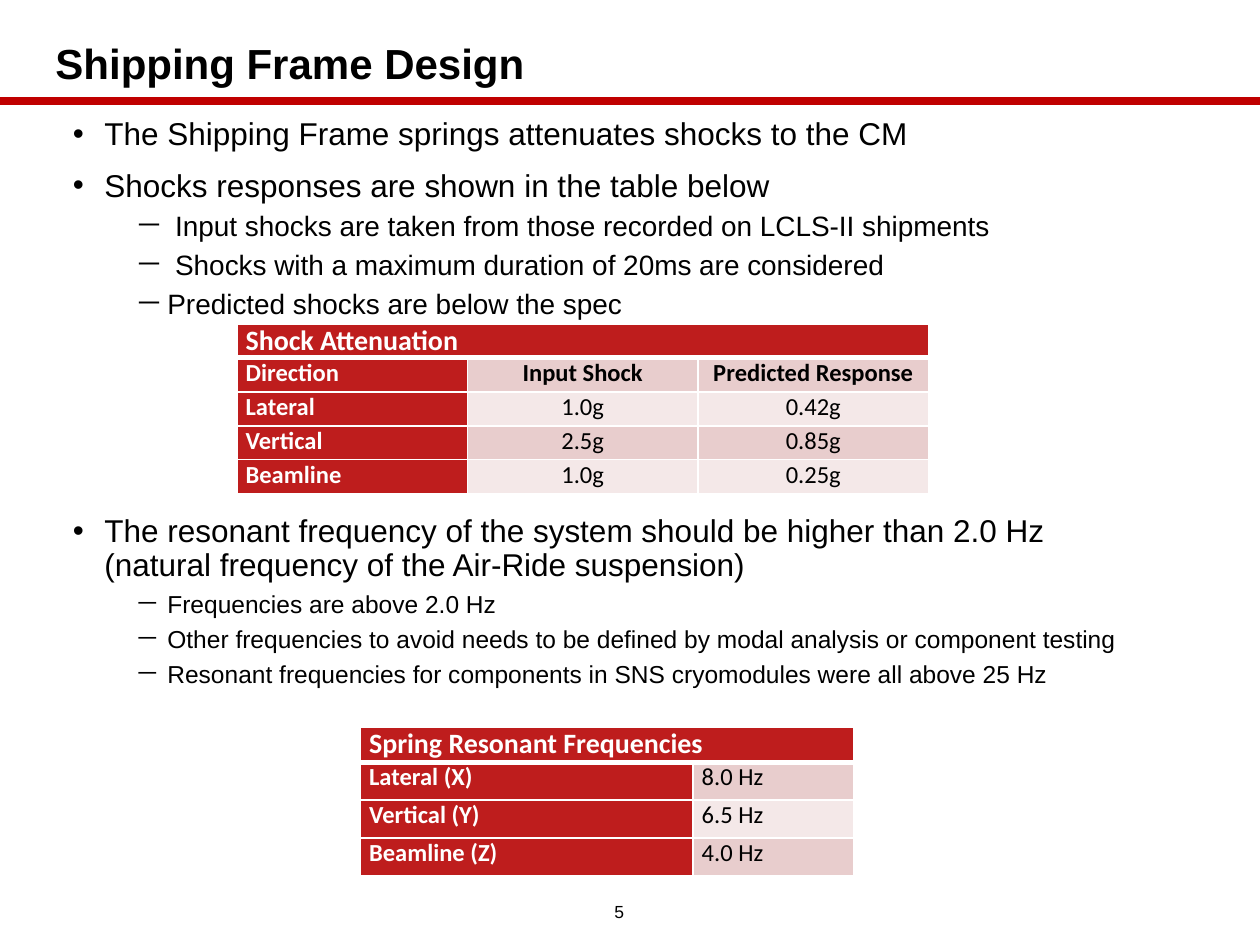
import pptx
import pptx.util
import pptx.dml.color
import pptx.enum.shapes
import pptx.enum.text
import pptx.oxml
from pptx.oxml.ns import nsdecls
from pptx.util import Inches

ALIGN = pptx.enum.text.PP_ALIGN
MIDDLE = pptx.enum.text.MSO_ANCHOR.MIDDLE
RED, ROSE, PALE = "BE1D1D", "E8CDCD", "F4E8E8"
WHITE, BLACK = "FFFFFF", "000000"


def color(value):
    return pptx.dml.color.RGBColor.from_string(value)


def style(para, size, name="Arial", ink=BLACK, bold=False):
    for span in para.runs:
        span.font.size = pptx.util.Pt(size)
        span.font.name = name
        span.font.bold = bold
        span.font.color.rgb = color(ink)


deck = pptx.Presentation()
deck.slide_width, deck.slide_height = Inches(10), Inches(7.5)
page = deck.slides.add_slide(deck.slide_layouts[5])

# Red rule under the title
rule = page.shapes.add_connector(
    pptx.enum.shapes.MSO_CONNECTOR.STRAIGHT,
    Inches(-0.01), Inches(0.8), Inches(10), Inches(0.8))
rule.line.color.rgb = color("C00000")
rule.line.width = pptx.util.Pt(4.5)
rule._element.spPr.append(pptx.oxml.parse_xml(f"<a:effectLst {nsdecls('a')}/>"))

# Title
title = page.shapes.title
title.left, title.top = Inches(0.34), Inches(0.26)
title.width, title.height = Inches(9.26), Inches(0.53)
title.text_frame.text = "Shipping Frame Design"
title.text_frame.vertical_anchor = MIDDLE
para = title.text_frame.paragraphs[0]
para.alignment = ALIGN.LEFT
para.line_spacing = 0.9
style(para, 24, bold=True)

# Bullet lists: top, size of the second level, (level, text) lines
bullet_lists = [
    (0.89, 16, [
        (0, "The Shipping Frame springs attenuates shocks to the CM"),
        (0, "Shocks responses are shown in the table below"),
        (1, " Input shocks are taken from those recorded on LCLS-II shipments"),
        (1, " Shocks with a maximum duration of 20ms are considered"),
        (1, "Predicted shocks are below the spec"),
    ]),
    (4.04, 14, [
        (0, "The resonant frequency of the system should be higher than 2.0 Hz "
            "(natural frequency of the Air-Ride suspension)"),
        (1, "Frequencies are above 2.0 Hz"),
        (1, "Other frequencies to avoid needs to be defined by modal analysis "
            "or component testing"),
        (1, "Resonant frequencies for components in SNS cryomodules were all "
            "above 25 Hz"),
    ]),
]
for top, sub_size, lines in bullet_lists:
    box = page.shapes.add_textbox(Inches(0.48), Inches(top), Inches(8.68), Inches(1.86))
    frame = box.text_frame
    frame.word_wrap = True
    frame.text = "\n".join(text for level, text in lines)
    for index, (para, (level, text)) in enumerate(zip(frame.paragraphs, lines)):
        para.level = level
        para.line_spacing = 0.9
        para.space_before = pptx.util.Pt((10, 5)[level] if index else 0)
        props = para._p.get_or_add_pPr()
        props.set("marL", str(Inches((0.25, 0.75)[level])))
        props.set("indent", str(Inches(-0.25)))
        props.append(pptx.oxml.parse_xml(
            f'<a:buFont {nsdecls("a")} typeface="Arial"/>'))
        props.append(pptx.oxml.parse_xml(
            f'<a:buChar {nsdecls("a")} char="{"•－"[level]}"/>'))
        style(para, (18, sub_size)[level])

# Tables: left, top, column widths, row heights, value alignment, rows
tables = [
    (1.88, 2.57, [1.83] * 3, [0.27] * 5, ALIGN.CENTER, [
        ["Shock Attenuation"],
        ["Direction", "Input Shock", "Predicted Response"],
        ["Lateral ", "1.0g", "0.42g"],
        ["Vertical", "2.5g", "0.85g"],
        ["Beamline", "1.0g", "0.25g"],
    ]),
    (2.86, 5.77, [2.64, 1.28], [0.28] + [0.3] * 3, ALIGN.JUSTIFY, [
        ["Spring Resonant Frequencies"],
        ["Lateral (X)", "8.0 Hz"],
        ["Vertical (Y)", "6.5 Hz"],
        ["Beamline (Z)", "4.0 Hz"],
    ]),
]
for left, top, widths, heights, value_align, rows in tables:
    table = page.shapes.add_table(
        len(heights), len(widths), Inches(left), Inches(top),
        Inches(sum(widths)), Inches(sum(heights))).table
    for column, width in zip(table.columns, widths):
        column.width = Inches(width)
    for row, height in zip(table.rows, heights):
        row.height = Inches(height)
    table.cell(0, 0).merge(table.cell(0, len(widths) - 1))

    for r, texts in enumerate(rows):
        for c in range(len(widths)):
            cell = table.cell(r, c)
            is_label = r == 0 or c == 0
            cell.margin_left = cell.margin_right = Inches(0.07)
            cell.margin_top = cell.margin_bottom = 0
            cell.fill.solid()
            cell.fill.fore_color.rgb = color(
                RED if is_label else ROSE if r % 2 else PALE)

            # White borders, thicker around the header's lower edge
            for place, side in enumerate("LRTB"):
                thick = (r, side) in ((0, "B"), (1, "T"))
                cell._tc.get_or_add_tcPr().insert(place, pptx.oxml.parse_xml(
                    f'<a:ln{side} {nsdecls("a")} w="{pptx.util.Pt(3 if thick else 1)}">'
                    f'<a:solidFill><a:srgbClr val="{WHITE}"/></a:solidFill>'
                    f'</a:ln{side}>'))

            if c < len(texts):
                cell.text_frame.text = texts[c]
                para = cell.text_frame.paragraphs[0]
                para.alignment = ALIGN.JUSTIFY if is_label else value_align
                is_heading = r == 1 and len(widths) == 3
                style(para, 14 if r else 16, "Calibri",
                      WHITE if is_label else BLACK, is_label or is_heading)

# Page number
number = page.shapes.add_textbox(Inches(4.62), Inches(7.07), Inches(0.59), Inches(0.33))
number.text_frame.word_wrap = True
number.text_frame.text = "5"
number.text_frame.vertical_anchor = MIDDLE
number.text_frame.paragraphs[0].alignment = ALIGN.CENTER
style(number.text_frame.paragraphs[0], 10)

deck.save("out.pptx")
